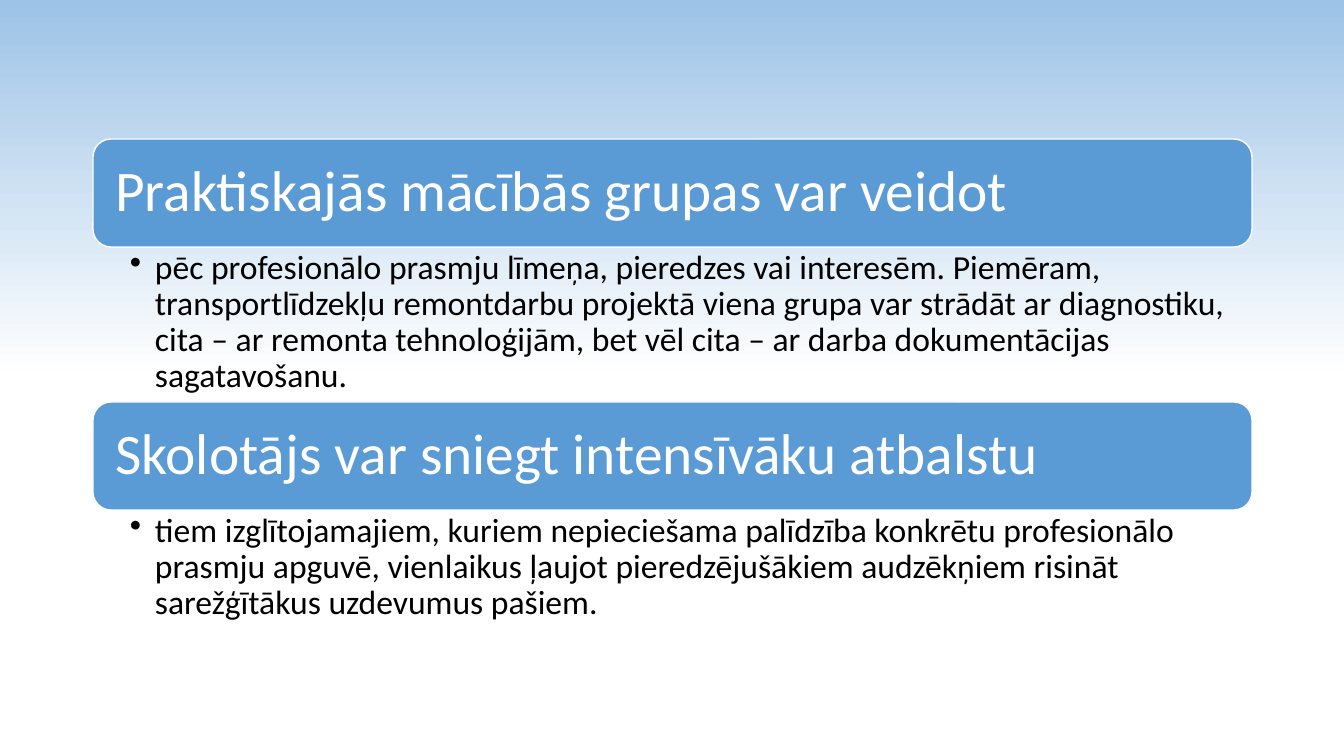
import pptx
import pptx.dml.color
import pptx.enum.shapes
import pptx.enum.text
import pptx.oxml.ns
import pptx.util
from lxml import etree

SCALE = 914400 / 100.8  # EMU in one px
FONT = "Calibri"
COLORS = {"sky": "9DC3E6", "blue": "5B9BD5", "white": "FFFFFF", "black": "000000"}


def px(n):
    return pptx.util.Emu(round(n * SCALE))


def color(name):
    return pptx.dml.color.RGBColor.from_string(COLORS[name])


class Deck:
    def __init__(self, width, height):
        self.prs = pptx.Presentation()
        self.prs.slide_width, self.prs.slide_height = px(width), px(height)
        self.slide = self.prs.slides.add_slide(self.prs.slide_layouts[6])

    def fade(self, top, base):
        """Fill the background from top to mid-height."""
        fill = self.slide.background.fill
        fill.gradient()
        fill.gradient_angle = 270
        for stop, name, pos in zip(fill.gradient_stops, (top, base), (0, 0.5)):
            stop.color.rgb = color(name)
            stop.position = pos

    def label(self, shape, text, size, tint, pad, anchor, bullet=0):
        frame = shape.text_frame
        frame.word_wrap = True
        frame.vertical_anchor = anchor
        frame.margin_left, frame.margin_top, frame.margin_right, frame.margin_bottom = map(px, pad)
        para = frame.paragraphs[0]
        para.alignment = pptx.enum.text.PP_ALIGN.LEFT
        para.line_spacing = 0.9
        if bullet:
            props = para._p.get_or_add_pPr()
            props.set("marL", str(px(bullet)))
            props.set("indent", str(-px(bullet)))
            mark = etree.SubElement(props, pptx.oxml.ns.qn("a:buChar"))
            mark.set("char", "•")
        run = para.add_run()
        run.text = text
        run.font.name = FONT
        run.font.size = pptx.util.Pt(size)
        run.font.color.rgb = color(tint)

    def bar(self, left, top, width, height, text):
        kind = pptx.enum.shapes.MSO_SHAPE.ROUNDED_RECTANGLE
        shape = self.slide.shapes.add_shape(kind, px(left), px(top), px(width), px(height))
        shape.shadow.inherit = False
        shape.fill.solid()
        shape.fill.fore_color.rgb = color("blue")
        shape.line.color.rgb = color("white")
        shape.line.width = pptx.util.Pt(1)
        self.label(shape, text, 41, "white", (17, 17, 17, 17),
                   pptx.enum.text.MSO_ANCHOR.MIDDLE)

    def note(self, left, top, width, height, text):
        box = self.slide.shapes.add_textbox(px(left), px(top), px(width), px(height))
        self.label(box, text, 24, "black", (37, 3, 19, 3),
                   pptx.enum.text.MSO_ANCHOR.TOP, bullet=25)


LEFT, TOP, WIDTH, BAR = 93, 139, 1159, 108
# Heading, body text, body height
PARTS = [
    ("Praktiskajās mācībās grupas var veidot",
     "pēc profesionālo prasmju līmeņa, pieredzes vai interesēm. Piemēram, "
     "transportlīdzekļu remontdarbu projektā viena grupa var strādāt ar diagnostiku, "
     "cita – ar remonta tehnoloģijām, bet vēl cita – ar darba dokumentācijas sagatavošanu.",
     155),
    ("Skolotājs var sniegt intensīvāku atbalstu",
     "tiem izglītojamajiem, kuriem nepieciešama palīdzība konkrētu profesionālo prasmju "
     "apguvē, vienlaikus ļaujot pieredzējušākiem audzēkņiem risināt sarežģītākus "
     "uzdevumus pašiem.",
     168),
]


def main():
    deck = Deck(1344, 756)
    deck.fade("sky", "white")
    # Headings and bodies stacked without gaps
    top = TOP
    for head, body, height in PARTS:
        deck.bar(LEFT, top, WIDTH, BAR, head)
        deck.note(LEFT, top + BAR, WIDTH, height, body)
        top += BAR + height
    deck.prs.save("out.pptx")


if __name__ == "__main__":
    main()
